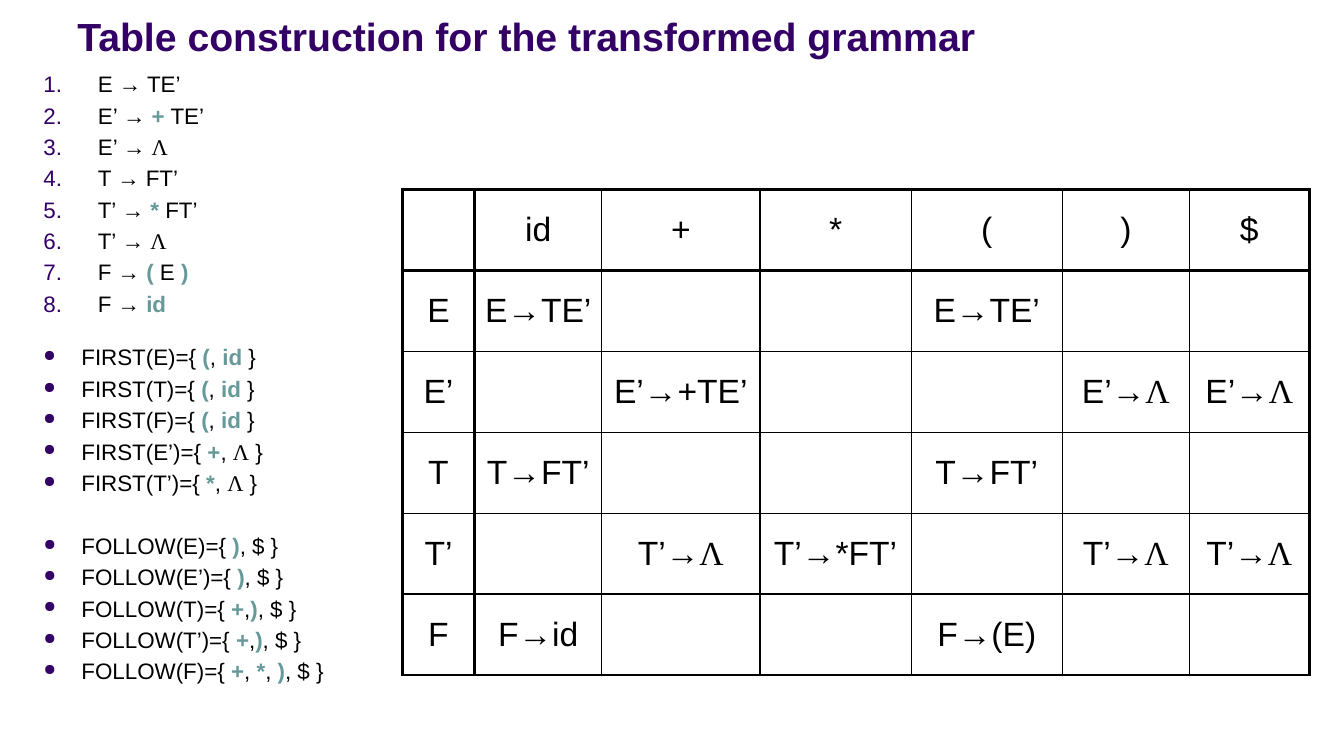
import dataclasses
import itertools

import lxml.etree
import pptx
import pptx.dml.color
import pptx.enum.text
import pptx.oxml.ns
import pptx.util

qn = pptx.oxml.ns.qn


@dataclasses.dataclass(frozen=True)
class Theme:
    font: str = "Arial"
    greek_font: str = "Times New Roman"
    accent: str = "330066"
    terminal: str = "669999"
    ink: str = "000000"
    title_size: int = 28
    table_size: int = 24
    list_size: int = 16
    thick: float = 2.25
    thin: float = 1


class Deck:
    COLUMNS, ROWS = 40, 75

    def __init__(self, theme):
        self.theme = theme
        self.prs = pptx.Presentation()
        self.prs.slide_width = pptx.util.Inches(13.33)
        self.prs.slide_height = pptx.util.Inches(7.5)
        self.s = self.prs.slides.add_slide(self.prs.slide_layouts[5])

    def x(self, columns):
        return round(self.prs.slide_width * columns / self.COLUMNS)

    def y(self, rows):
        return round(self.prs.slide_height * rows / self.ROWS)

    def box(self, left, top, width, height):
        return self.x(left), self.y(top), self.x(width), self.y(height)

    def run(self, p, text, size, color, bold=False, font=None):
        r = p.add_run()
        r.text = text
        r.font.name = font or self.theme.font
        r.font.size = pptx.util.Pt(size)
        r.font.bold = bold
        r.font.color.rgb = pptx.dml.color.RGBColor.from_string(color)

    def runs(self, p, text, size):
        for i, part in enumerate(text.split("|")):
            terminal = i % 2 == 1
            color = self.theme.terminal if terminal else self.theme.ink
            for greek, letters in itertools.groupby(part, lambda c: c == "Λ"):
                font = self.theme.greek_font if greek else self.theme.font
                self.run(p, "".join(letters), size, color, terminal, font)

    def space_before(self, p):
        pPr = p._p.get_or_add_pPr()
        before = lxml.etree.SubElement(pPr, qn("a:spcBef"))
        lxml.etree.SubElement(before, qn("a:spcPct"), val="20000")
        return pPr

    def title(self, text, *area):
        sp = self.s.shapes.title
        sp.left, sp.top, sp.width, sp.height = self.box(*area)
        tf = sp.text_frame
        tf.auto_size = pptx.enum.text.MSO_AUTO_SIZE.NONE
        tf.vertical_anchor = pptx.enum.text.MSO_ANCHOR.BOTTOM
        p = tf.paragraphs[0]
        p.alignment = pptx.enum.text.PP_ALIGN.LEFT
        self.run(p, text, self.theme.title_size, self.theme.accent, True)

    def bullets(self, lines, *area, indent, numbered=False):
        tf = self.s.shapes.add_textbox(*self.box(*area)).text_frame
        tf.word_wrap = True
        for i, line in enumerate(lines):
            p = tf.add_paragraph() if i else tf.paragraphs[0]
            pPr = self.space_before(p)
            pPr.set("marL", str(self.x(indent)))
            pPr.set("indent", str(-self.x(indent)))
            color = lxml.etree.SubElement(pPr, qn("a:buClr"))
            lxml.etree.SubElement(color, qn("a:srgbClr"), val=self.theme.accent)
            if numbered:
                lxml.etree.SubElement(pPr, qn("a:buAutoNum"), type="arabicPeriod")
            else:
                lxml.etree.SubElement(pPr, qn("a:buSzPct"), val="70000")
                lxml.etree.SubElement(pPr, qn("a:buChar"), char="●")
            self.runs(p, line, self.theme.list_size)

    def border(self, cell, side, width):
        tcPr = cell._tc.get_or_add_tcPr()
        ln = lxml.etree.SubElement(tcPr, qn(f"a:ln{side}"), w=str(pptx.util.Pt(width)))
        fill = lxml.etree.SubElement(ln, qn("a:solidFill"))
        lxml.etree.SubElement(fill, qn("a:srgbClr"), val=self.theme.ink)

    def table(self, data, widths, left, top, row_height):
        rows, columns = len(data), len(widths)
        area = self.box(left, top, sum(widths), rows * row_height)
        table = self.s.shapes.add_table(rows, columns, *area).table
        table.first_row = table.horz_banding = False
        for column, width in zip(table.columns, widths):
            column.width = self.x(width)
        for row in table.rows:
            row.height = self.y(row_height)
        for i, j in itertools.product(range(rows), range(columns)):
            cell = table.cell(i, j)
            edges = {"L": j < 2, "R": j in (0, columns - 1),
                     "T": i < 2, "B": i in (0, rows - 1)}
            for side, heavy in edges.items():
                self.border(cell, side, self.theme.thick if heavy else self.theme.thin)
            cell.fill.background()
            cell.vertical_anchor = pptx.enum.text.MSO_ANCHOR.MIDDLE
            if data[i][j]:
                p = cell.text_frame.paragraphs[0]
                p.alignment = pptx.enum.text.PP_ALIGN.CENTER
                self.space_before(p)
                self.runs(p, data[i][j], self.theme.table_size)


PRODUCTIONS = [
    "E → TE’",
    "E’ → |+| TE’",
    "E’ → Λ",
    "T → FT’",
    "T’ → |*| FT’",
    "T’ → Λ",
    "F → |(| E |)|",
    "F → |id|",
]
FIRST_SETS = [
    "FIRST(E)={ |(|, |id| }",
    "FIRST(T)={ |(|, |id| }",
    "FIRST(F)={ |(|, |id| }",
    "FIRST(E’)={ |+|, Λ }",
    "FIRST(T’)={ |*|, Λ }",
]
FOLLOW_SETS = [
    "FOLLOW(E)={ |)|, $ }",
    "FOLLOW(E’)={ |)|, $ }",
    "FOLLOW(T)={ |+|,|)|, $ }",
    "FOLLOW(T’)={ |+|,|)|, $ }",
    "FOLLOW(F)={ |+|, |*|, |)|, $ }",
]
PARSE_TABLE = [
    ["", "id", "+", "*", "(", ")", "$"],
    ["E", "E→TE’", "", "", "E→TE’", "", ""],
    ["E’", "", "E’→+TE’", "", "", "E’→Λ", "E’→Λ"],
    ["T", "T→FT’", "", "", "T→FT’", "", ""],
    ["T’", "", "T’→Λ", "T’→*FT’", "", "T’→Λ", "T’→Λ"],
    ["F", "F→id", "", "", "F→(E)", "", ""],
]
TABLE_COLUMNS = [2.16, 3.78, 4.71, 4.5, 4.5, 3.78, 3.57]


def main():
    deck = Deck(Theme())
    deck.title("Table construction for the transformed grammar", 2, 1.3, 36, 5.1)
    deck.table(PARSE_TABLE, TABLE_COLUMNS, 11.97, 18.8, 8.03)
    deck.bullets(PRODUCTIONS, 1, 6.5, 8.7, 26, indent=1.62, numbered=True)
    deck.bullets(FIRST_SETS, 1, 33.6, 9.3, 17.3, indent=1.13)
    deck.bullets(FOLLOW_SETS, 1, 52.3, 9.8, 17.3, indent=1.13)
    deck.prs.save("out.pptx")


if __name__ == "__main__":
    main()
